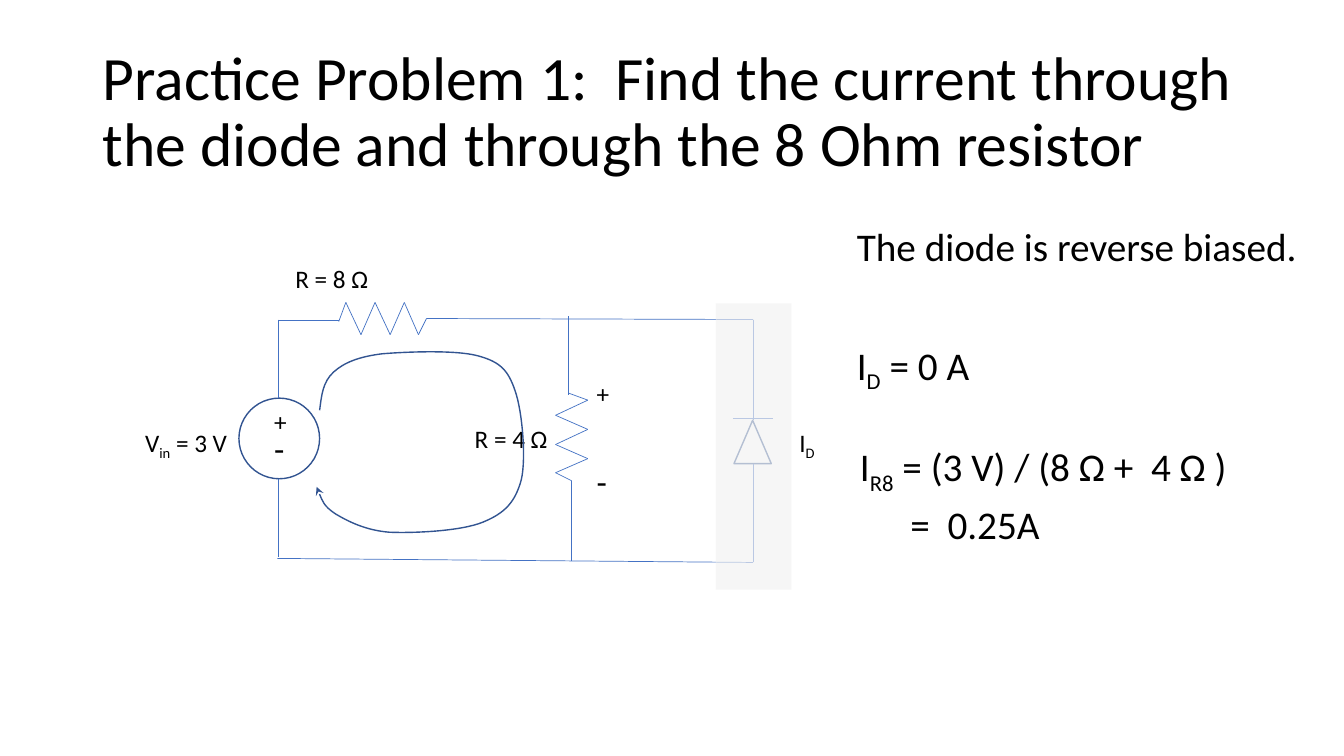
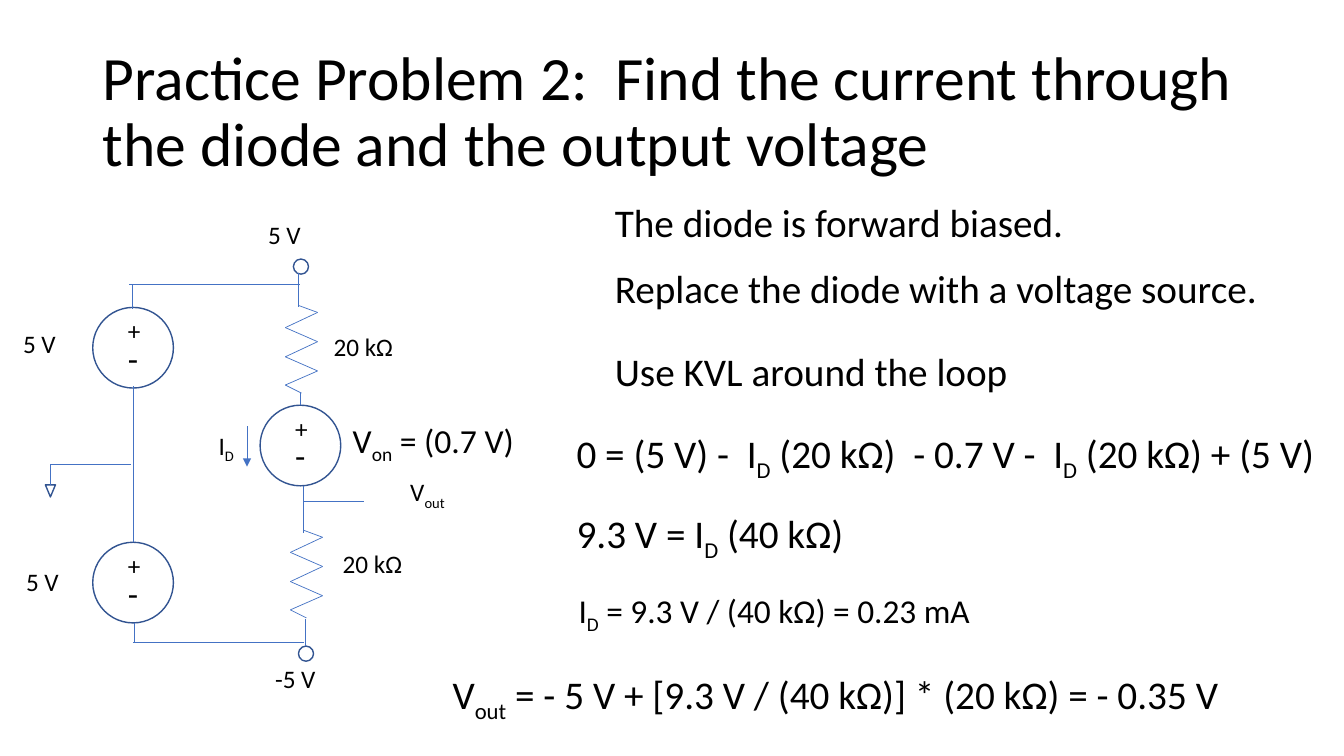
import itertools

import pptx
import pptx.dml.color
import pptx.enum.shapes
import pptx.enum.text
import pptx.oxml.ns
import pptx.oxml.xmlchemy
import pptx.util
from lxml import etree

Inches, Pt = pptx.util.Inches, pptx.util.Pt
qn = pptx.oxml.ns.qn
rgb = pptx.dml.color.RGBColor.from_string
PRESET = pptx.enum.shapes.MSO_SHAPE
ANCHOR = pptx.enum.text.MSO_ANCHOR

# Shared style
INK, WIRE, OUTLINE, PAPER, VEIL = "000000", "4472C4", "325491", "FFFFFF", "F2F2F2"
FONT = "Calibri"
SOURCE_SIZE = 0.8
TERMINAL_SIZE = 0.15
LABEL = {"line_spacing": 1.0, "space_before": Pt(0)}
STATEMENT = {"line_spacing": 0.9, "space_before": Pt(10)}
TITLE = {"line_spacing": 0.9, "space_before": Pt(0)}
# Corner points of a vertical resistor, relative to its upper end
ZIGZAG = [(0, 0), (0.19, 0.07), (-0.13, 0.22), (0.19, 0.36),
          (-0.13, 0.51), (0.19, 0.65), (-0.13, 0.79), (0.03, 0.87)]


def add_text(slide, text, left, top, width, height, size, style, anchor=ANCHOR.TOP):
    """Write text; parts between ~ marks are subscripts, later lines are indented."""
    frame = slide.shapes.add_textbox(
        Inches(left), Inches(top), Inches(width), Inches(height)).text_frame
    for name, value in {"word_wrap": True, "vertical_anchor": anchor}.items():
        setattr(frame, name, value)
    for row, content in enumerate(text.split("\n")):
        paragraph = frame.add_paragraph() if row else frame.paragraphs[0]
        for name, value in style.items():
            setattr(paragraph, name, value)
        if row:
            paragraph._p.get_or_add_pPr().set("marL", str(Inches(0.5)))
        for index, part in enumerate(content.split("~")):
            run = paragraph.add_run()
            run.text = part
            for name, value in {"name": FONT, "size": Pt(size)}.items():
                setattr(run.font, name, value)
            run.font.color.rgb = rgb(INK)
            if index % 2:
                run._r.get_or_add_rPr().set("baseline", "-25000")


def add_wire(slide, x1, y1, x2, y2):
    wire = slide.shapes.add_connector(
        pptx.enum.shapes.MSO_CONNECTOR.STRAIGHT,
        Inches(x1), Inches(y1), Inches(x2), Inches(y2))
    wire.line.color.rgb = rgb(WIRE)
    wire.line.width = Pt(0.5)
    etree.SubElement(wire._element.spPr, qn("a:effectLst"))
    return wire


deck = pptx.Presentation()
deck.slide_width, deck.slide_height = Inches(13.33), Inches(7.5)
reverse, forward = [deck.slides.add_slide(deck.slide_layouts[6]) for _ in range(2)]

# Titles
for slide, title in [
    (reverse, "Practice Problem 1:  Find the current through the diode "
              "and through the 8 Ohm resistor"),
    (forward, "Practice Problem 2:  Find the current through the diode "
              "and the output voltage"),
]:
    add_text(slide, title, 0.92, 0.4, 11.5, 1.45, 44, TITLE, ANCHOR.MIDDLE)

# Voltage sources, terminals, diode and ground
sources = [(reverse, 2.37, 3.95), (forward, 0.92, 3.05),
           (forward, 0.92, 5.38), (forward, 2.58, 4.02)]
symbols = [(slide, PRESET.OVAL, left, top, SOURCE_SIZE, SOURCE_SIZE, 0)
           for slide, left, top in sources]
symbols += [(forward, PRESET.OVAL, left, top, TERMINAL_SIZE, TERMINAL_SIZE, 0)
            for left, top in [(2.91, 2.57), (2.96, 6.41)]]
symbols += [(reverse, PRESET.ISOSCELES_TRIANGLE, 7.28, 4.17, 0.37, 0.43, 0),
            (forward, PRESET.ISOSCELES_TRIANGLE, 0.45, 4.81, 0.1, 0.12, 180)]
for slide, preset, left, top, width, height, turn in symbols:
    symbol = slide.shapes.add_shape(
        preset, Inches(left), Inches(top), Inches(width), Inches(height))
    symbol.shadow.inherit = False
    symbol.rotation = turn
    symbol.fill.solid()
    symbol.fill.fore_color.rgb = rgb(PAPER)
    symbol.line.color.rgb = rgb(OUTLINE)
    symbol.line.width = Pt(1)

# Polarity marks: inside each source and beside the 4 Ω resistor
polarity = [(slide, left + 0.25, top + 0.03, top + 0.25) for slide, left, top in sources]
polarity.append((reverse, 5.82, 3.7, 4.52))
for slide, left, plus_top, minus_top in polarity:
    add_text(slide, "+", left, plus_top, 0.36, 0.4, 18, LABEL)
    add_text(slide, "-", left, minus_top, 0.36, 0.5, 24, LABEL)

# Resistors
for slide, x, y, horizontal in [(reverse, 3.36, 3.19, True), (reverse, 5.64, 3.9, False),
                                (forward, 2.96, 3.03, False), (forward, 3.01, 5.26, False)]:
    corners = [(x + along, y - across) if horizontal else (x + across, y + along)
               for across, along in ZIGZAG]
    for start, end in itertools.pairwise(corners):
        add_wire(slide, *start, *end)

# Wires
for slide, wires in [
    (reverse, [
        (2.76, 3.17, 2.76, 3.95), (2.76, 4.75, 2.76, 5.53), (2.76, 3.18, 3.36, 3.18),
        (4.23, 3.16, 7.47, 3.17), (2.75, 5.54, 7.47, 5.58), (7.47, 3.17, 7.47, 4.17),
        (7.47, 4.6, 7.47, 5.58), (7.27, 4.15, 7.67, 4.15), (5.64, 3.14, 5.64, 3.92),
        (5.67, 4.77, 5.67, 5.57)]),
    (forward, [
        (3.01, 4.97, 3.61, 4.97), (2.96, 2.71, 2.96, 3.05), (2.98, 3.9, 2.98, 4.02),
        (3.01, 4.82, 3.01, 5.29), (3.03, 6.14, 3.03, 6.41), (1.32, 3.83, 1.32, 5.38),
        (1.33, 6.18, 1.33, 6.38), (1.32, 6.37, 3.02, 6.37), (1.28, 2.82, 2.98, 2.82),
        (0.5, 4.61, 1.3, 4.61), (1.31, 2.82, 1.31, 3.07), (0.5, 4.61, 0.5, 4.81)]),
]:
    for ends in wires:
        add_wire(slide, *ends)

# Direction of the diode current
diode_current = add_wire(forward, 2.45, 4.23, 2.45, 4.63)
etree.SubElement(diode_current._element.spPr.find(qn("a:ln")),
                 qn("a:tailEnd"), type="triangle")

# Component labels
for slide, label, left, top in [
    (reverse, "V~in~ = 3 V", 1.34, 4.19),
    (reverse, "R = 8 Ω", 2.83, 2.56),
    (reverse, "R = 4 Ω", 4.61, 4.15),
    (reverse, "I~D~", 7.83, 4.19),
    (forward, "V~out~", 3.97, 4.68),
    (forward, "5 V", 2.56, 2.13),
    (forward, "-5 V", 2.63, 6.53),
    (forward, "5 V", 0.13, 3.21),
    (forward, "5 V", 0.16, 5.57),
    (forward, "I~D~", 2.07, 4.22),
    (forward, "20 kΩ", 3.21, 3.24),
    (forward, "20 kΩ", 3.3, 5.39),
]:
    add_text(slide, label, left, top, 1.18, 0.4, 18, LABEL)

# Veil over the blocked diode branch
veil = reverse.shapes.add_shape(
    PRESET.RECTANGLE, Inches(7.1), Inches(3.01), Inches(0.75), Inches(2.84))
veil.shadow.inherit = False
veil.fill.solid()
veil.fill.fore_color.rgb = rgb(VEIL)
veil.line.fill.background()
etree.SubElement(veil._element.spPr.find(".//" + qn("a:srgbClr")),
                 qn("a:alpha"), val="68000")

# Current loop: a start point, then three points for each curve
loop_points = [(Inches(x), Inches(y)) for x, y in [
    (3.17, 4.07),
    (3.19, 3.92), (3.2, 3.79), (3.31, 3.69),
    (3.41, 3.6), (3.55, 3.54), (3.79, 3.51),
    (4.03, 3.49), (4.52, 3.47), (4.74, 3.53),
    (4.96, 3.59), (5.04, 3.67), (5.11, 3.88),
    (5.18, 4.08), (5.22, 4.55), (5.17, 4.76),
    (5.11, 4.98), (5.01, 5.09), (4.79, 5.18),
    (4.57, 5.27), (4.1, 5.29), (3.86, 5.28),
    (3.62, 5.26), (3.45, 5.17), (3.33, 5.1),
    (3.21, 5.02), (3.18, 4.93), (3.14, 4.83)]]
builder = reverse.shapes.build_freeform(*loop_points[0])
builder.add_line_segments(loop_points[1:], close=False)
current_loop = builder.convert_to_shape()
current_loop.shadow.inherit = False
current_loop.fill.background()
current_loop.line.color.rgb = rgb(OUTLINE)
current_loop.line.width = Pt(1)
loop_properties = current_loop._element.spPr
etree.SubElement(loop_properties.find(qn("a:ln")), qn("a:tailEnd"), type="stealth")
loop_outline = loop_properties.find(".//" + qn("a:path"))
segments = loop_outline.findall(qn("a:lnTo"))
for first in range(0, len(segments), 3):
    curve = etree.SubElement(loop_outline, qn("a:cubicBezTo"))
    for segment in segments[first:first + 3]:
        curve.append(segment[0])
        loop_outline.remove(segment)

# Solution steps
for slide, step, left, top, width, height, size in [
    (reverse, "The diode is reverse biased.", 8.4, 2.21, 4.78, 0.61, 28),
    (reverse, "I~D~ = 0 A", 8.4, 3.34, 4.78, 0.61, 28),
    (reverse, "I~R8~ = (3 V) / (8 Ω +  4 Ω )\n=  0.25A", 8.43, 4.35, 4.78, 1.18, 28),
    (forward, "The diode is forward biased.", 6, 1.97, 4.78, 0.61, 28),
    (forward, "V~on~ = (0.7 V)", 3.4, 4.12, 1.85, 0.61, 24),
    (forward, "Replace the diode with a voltage source.", 6, 2.63, 6.82, 0.69, 28),
    (forward, "Use KVL around the loop", 6, 3.45, 6.82, 0.69, 28),
    (forward, "0 = (5 V) -  I~D~ (20 kΩ)  - 0.7 V -  I~D~ (20 kΩ) + (5 V)",
     5.62, 4.22, 7.71, 0.69, 28),
    (forward, "9.3 V = I~D~ (40 kΩ)", 5.62, 5.01, 3.49, 0.69, 28),
    (forward, "I~D~ = 9.3 V / (40 kΩ) = 0.23 mA", 5.64, 5.81, 4.18, 0.49, 23.8),
    (forward, "V~out~ = - 5 V + [9.3 V / (40 kΩ)] * (20 kΩ) = - 0.35 V",
     4.39, 6.61, 8.43, 0.61, 28),
]:
    add_text(slide, step, left, top, width, height, size, STATEMENT)

deck.save("out.pptx")
